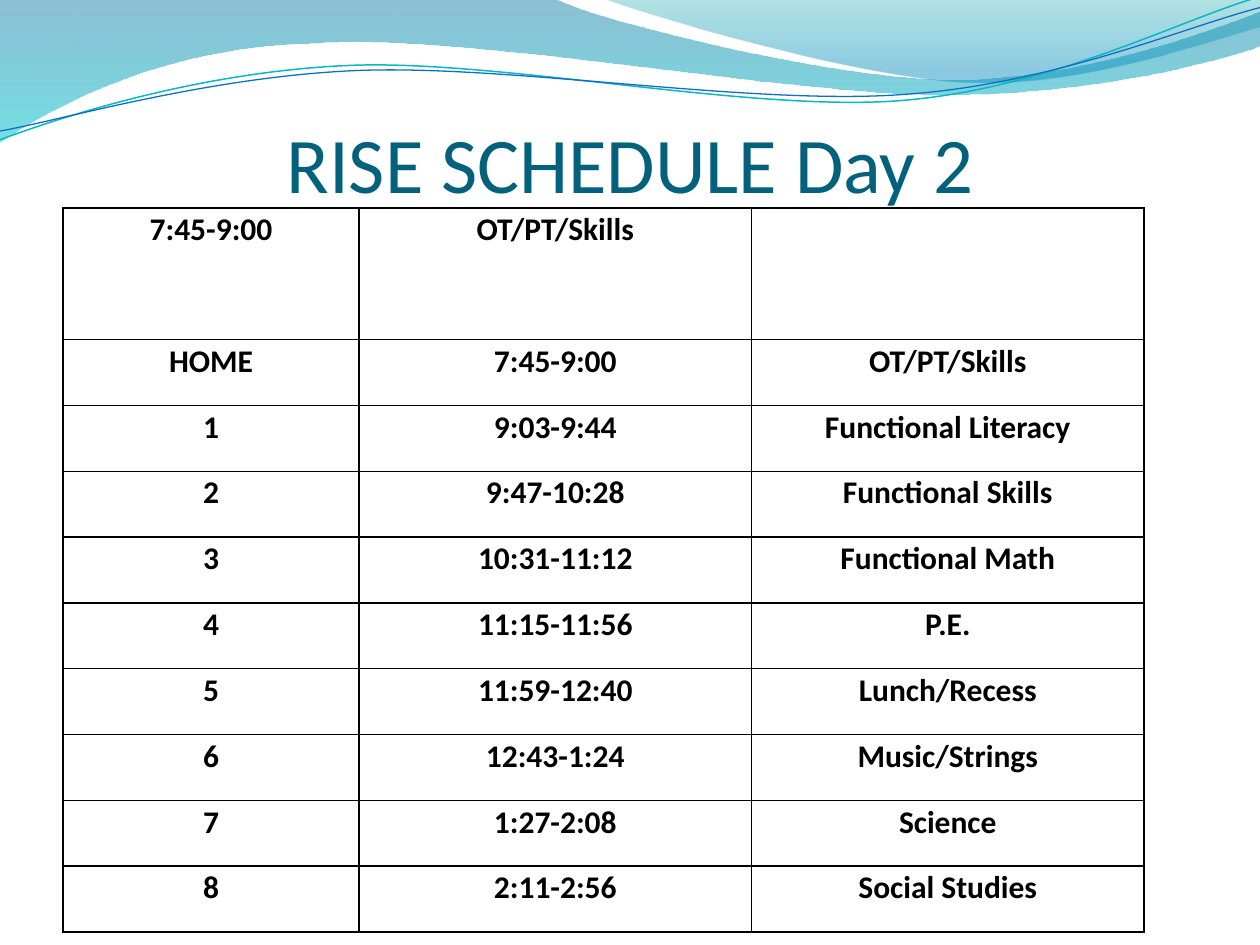
from math import cos, radians, sin

from lxml.etree import SubElement
from pptx import Presentation
from pptx.dml.color import RGBColor
from pptx.enum.text import MSO_ANCHOR, PP_ALIGN
from pptx.oxml import parse_xml
from pptx.oxml.ns import nsdecls, qn
from pptx.util import Inches, Pt

FONT = "Calibri"
BLACK = RGBColor(0x00, 0x00, 0x00)
TITLE_TEAL = RGBColor(0x04, 0x61, 0x7B)
LINE_TEAL = RGBColor(0x0A, 0xB8, 0xBF)
LINE_BLUE = RGBColor(0x0F, 0x6F, 0xC6)
DEEP_BLUE = RGBColor(0x00, 0x74, 0xA1)
CYAN = RGBColor(0x00, 0xC6, 0xCF)
SEA_GREEN = RGBColor(0x00, 0xA1, 0xA9)
SKY_BLUE = RGBColor(0x00, 0x8B, 0xBF)

TITLE = "RISE SCHEDULE Day 2"
SCHEDULE = [
    ("7:45-9:00", "OT/PT/Skills", ""),
    ("HOME", "7:45-9:00", "OT/PT/Skills"),
    ("1", "9:03-9:44", "Functional Literacy"),
    ("2", "9:47-10:28", "Functional Skills"),
    ("3", "10:31-11:12", "Functional Math"),
    ("4", "11:15-11:56", "P.E."),
    ("5", "11:59-12:40", "Lunch/Recess"),
    ("6", "12:43-1:24", "Music/Strings"),
    ("7", "1:27-2:08", "Science"),
    ("8", "2:11-2:56", "Social Studies"),
]
TABLE_WIDTH, TABLE_HEIGHT = 8.58, 5.75
FIRST_COLUMN = 2.35

# Frame (left, top, width, height), then the outline: a start point followed by
# lines (x, y) or Bezier curves (two controls, end).
# Gradient stops: position, colour, opacity in percent.
WAVES = [
    ((-0.01, -0.01, 10.02, 1.14),
     [(0, 0), (4.4, -0.01), (4.76, 0.17, 6.64, 0.63, 7.58, 0.63),
      (8.53, 0.63, 9.58, 0.26, 10, 0.09), (10.01, 0.36),
      (9.83, 0.44, 8.7, 0.76, 7.46, 0.75), (6.22, 0.75, 3.82, 0.28, 2.57, 0.34),
      (1.29, 0.36, 0.46, 0.83, -0.01, 1.13), (0, 0)],
     [(0, DEEP_BLUE, 45), (1, CYAN, 55)]),
    ((4.79, -0.01, 5.21, 0.7),
     [(4.79, -0.01), (5.09, 0.11, 6.82, 0.62, 7.69, 0.65),
      (8.56, 0.69, 9.61, 0.32, 10, 0.21), (10, 0), (4.79, -0.01)],
     [(0, SEA_GREEN, 30), (0.8, SKY_BLUE, 45)]),
]
LINE_TILT = -2.7
WAVE_LINES = [
    ((-0.02, 0.22, 10.02, 0.71),
     [(0, 1.11), (0.48, 0.93, 1.58, 0.57, 2.77, 0.52),
      (3.95, 0.47, 5.93, 0.89, 7.13, 0.8), (8.33, 0.71, 9.38, 0.15, 9.98, -0.02)],
     LINE_TEAL, 0.85),
    ((-0.02, 0.3, 10.03, 0.58),
     [(0, 1.04), (0.47, 0.96, 1.64, 0.61, 2.83, 0.56),
      (4.03, 0.51, 5.97, 0.84, 7.17, 0.75), (8.36, 0.67, 9.41, 0.21, 10, 0.06)],
     LINE_BLUE, 0.75),
]


def add_outline(slide, frame, outline, close=False, tilt=0):
    """Add a freeform with true curves; the outline is given as seen after the tilt."""
    left, top, width, height = frame
    ends = [(Inches(segment[-2]), Inches(segment[-1])) for segment in outline]
    builder = slide.shapes.build_freeform(*ends[0])
    builder.add_line_segments(ends[1:], close=close)
    shape = builder.convert_to_shape()
    shape.left, shape.top, shape.width, shape.height = map(Inches, frame)
    shape.rotation = tilt
    shape.shadow.inherit = False

    # Redraw the geometry inside the frame, with the tilt taken out
    turn = radians(-tilt)
    geometry = shape._element.spPr.find(".//" + qn("a:path"))
    geometry.set("w", str(shape.width))
    geometry.set("h", str(shape.height))
    for step in list(geometry):
        geometry.remove(step)
    for index, segment in enumerate(outline):
        tag = "a:moveTo" if index == 0 else "a:lnTo" if len(segment) == 2 else "a:cubicBezTo"
        step = SubElement(geometry, qn(tag))
        for x, y in zip(segment[::2], segment[1::2]):
            dx, dy = x - left - width / 2, y - top - height / 2
            local_x = width / 2 + dx * cos(turn) - dy * sin(turn)
            local_y = height / 2 + dx * sin(turn) + dy * cos(turn)
            SubElement(step, qn("a:pt"), x=str(Inches(local_x)), y=str(Inches(local_y)))
    if close:
        SubElement(geometry, qn("a:close"))
    return shape


def add_wave(slide, frame, outline, stops):
    wave = add_outline(slide, frame, outline, close=True)
    wave.line.fill.background()
    wave.fill.gradient()
    wave.fill.gradient_angle = 270  # first colour on top
    for stop, (position, colour, _) in zip(wave.fill.gradient_stops, stops):
        stop.position = position
        stop.color.rgb = colour
    colours = list(wave._element.spPr.iter(qn("a:srgbClr")))
    for element, (_, _, opacity) in zip(colours, stops):
        SubElement(element, qn("a:alpha"), val=str(opacity * 1000))


def add_wave_line(slide, frame, outline, colour, width):
    curve = add_outline(slide, frame, outline, tilt=LINE_TILT)
    curve.fill.background()
    curve.line.color.rgb = colour
    curve.line.width = Pt(width)


def style(paragraph, size, colour, bold=False):
    paragraph.alignment = PP_ALIGN.CENTER
    for run in paragraph.runs:
        run.font.name, run.font.size, run.font.bold = FONT, Pt(size), bold
        run.font.color.rgb = colour


def add_borders(cell):
    properties = cell._tc.get_or_add_tcPr()
    for index, side in enumerate(("lnL", "lnR", "lnT", "lnB")):
        properties.insert(index, parse_xml(
            f'<a:{side} {nsdecls("a")} w="{Pt(1)}"><a:solidFill>'
            f'<a:srgbClr val="{BLACK}"/></a:solidFill></a:{side}>'))


def add_title(slide):
    box = slide.shapes.add_textbox(Inches(0.5), Inches(1.08), Inches(9), Inches(0.58))
    frame = box.text_frame
    frame.word_wrap = True
    frame.vertical_anchor = MSO_ANCHOR.BOTTOM
    frame.margin_left = frame.margin_right = frame.margin_bottom = 0
    frame.margin_top = Inches(0.05)
    frame.text = TITLE
    style(frame.paragraphs[0], 45, TITLE_TEAL)


def add_schedule(slide):
    table = slide.shapes.add_table(
        len(SCHEDULE), len(SCHEDULE[0]), Inches(0.5), Inches(1.65),
        Inches(TABLE_WIDTH), Inches(TABLE_HEIGHT)).table
    table.first_row = table.horz_banding = False
    # The other two columns share the remaining width
    other_column = (TABLE_WIDTH - FIRST_COLUMN) / 2
    for c, column in enumerate(table.columns):
        column.width = Inches(FIRST_COLUMN if c == 0 else other_column)
    # The first row is twice as high as the others
    row_height = TABLE_HEIGHT / (len(SCHEDULE) + 1)
    for r, entries in enumerate(SCHEDULE):
        table.rows[r].height = Inches(row_height * (2 if r == 0 else 1))
        for c, entry in enumerate(entries):
            cell = table.cell(r, c)
            cell.margin_left = cell.margin_right = Inches(0.06 if r == 0 else 0.07)
            cell.margin_top = cell.margin_bottom = 0
            cell.fill.background()
            add_borders(cell)
            if entry:
                cell.text_frame.text = entry
                paragraph = cell.text_frame.paragraphs[0]
                paragraph.line_spacing = 1.07
                style(paragraph, 18, BLACK, bold=True)


def main():
    presentation = Presentation()
    presentation.slide_width, presentation.slide_height = Inches(10), Inches(7.5)
    slide = presentation.slides.add_slide(presentation.slide_layouts[6])
    # Wave decoration along the top
    for wave in WAVES:
        add_wave(slide, *wave)
    for wave_line in WAVE_LINES:
        add_wave_line(slide, *wave_line)
    # Content
    add_title(slide)
    add_schedule(slide)
    presentation.save("out.pptx")


if __name__ == "__main__":
    main()
